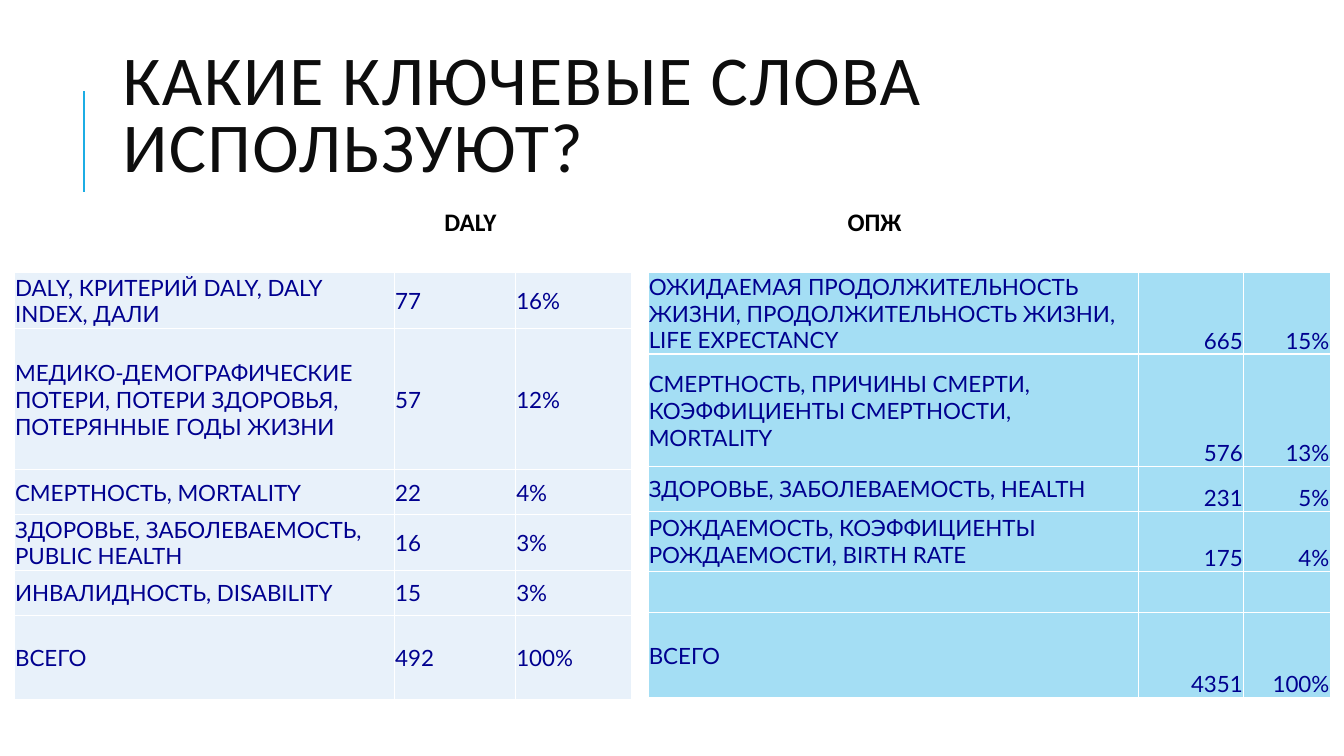
from lxml.etree import SubElement
from pptx import Presentation
from pptx.dml.color import RGBColor
from pptx.enum.shapes import MSO_CONNECTOR
from pptx.enum.text import MSO_ANCHOR, PP_ALIGN
from pptx.oxml.ns import qn
from pptx.util import Cm, Pt

DALY_ROWS = [
    ("DALY, КРИТЕРИЙ DALY, DALY INDEX, ДАЛИ", "77", "16%"),
    ("МЕДИКО-ДЕМОГРАФИЧЕСКИЕ ПОТЕРИ, ПОТЕРИ ЗДОРОВЬЯ, ПОТЕРЯННЫЕ ГОДЫ ЖИЗНИ", "57", "12%"),
    ("СМЕРТНОСТЬ, MORTALITY", "22", "4%"),
    ("ЗДОРОВЬЕ, ЗАБОЛЕВАЕМОСТЬ, PUBLIC HEALTH", "16", "3%"),
    ("ИНВАЛИДНОСТЬ, DISABILITY", "15", "3%"),
    ("ВСЕГО", "492", "100%"),
]
LIFE_EXPECTANCY_ROWS = [
    ("ОЖИДАЕМАЯ ПРОДОЛЖИТЕЛЬНОСТЬ ЖИЗНИ, ПРОДОЛЖИТЕЛЬНОСТЬ ЖИЗНИ, LIFE EXPECTANCY", "665", "15%"),
    ("СМЕРТНОСТЬ, ПРИЧИНЫ СМЕРТИ, КОЭФФИЦИЕНТЫ СМЕРТНОСТИ, MORTALITY", "576", "13%"),
    ("ЗДОРОВЬЕ, ЗАБОЛЕВАЕМОСТЬ, HEALTH", "231", "5%"),
    ("РОЖДАЕМОСТЬ, КОЭФФИЦИЕНТЫ РОЖДАЕМОСТИ, BIRTH RATE", "175", "4%"),
    ("", "", ""),
    ("ВСЕГО", "4351", "100%"),
]


def color(value):
    return RGBColor.from_string(value)


def add_run(paragraph, text, size, font, text_color, bold=False):
    run = paragraph.add_run()
    run.text = text
    run.font.size = Pt(size)
    run.font.name = font
    run.font.bold = bold
    run.font.color.rgb = color(text_color)
    return run


def add_text_frame(slide, left, top, width, height):
    shape = slide.shapes.add_textbox(Cm(left), Cm(top), Cm(width), Cm(height))
    shape.text_frame.word_wrap = True
    return shape.text_frame


def add_title(slide, text):
    frame = add_text_frame(slide, 2.84, 0.91, 27, 4.17)
    frame.vertical_anchor = MSO_ANCHOR.MIDDLE
    paragraph = frame.paragraphs[0]
    paragraph.line_spacing = 0.8
    run = add_run(paragraph, text, 50, "Calibri", "0D0D0D")
    run.font.language_id = None
    run.font._element.set("spc", "100")


def add_accent_line(slide):
    line = slide.shapes.add_connector(
        MSO_CONNECTOR.STRAIGHT, Cm(2.11), Cm(4.83), Cm(2.11), Cm(2.29)
    )
    line.line.color.rgb = color("1CADE4")
    line.line.width = Pt(1.5)
    SubElement(line._element.spPr, qn("a:effectLst"))


def add_table_headings(slide, left_heading, right_heading):
    frame = add_text_frame(slide, 10.95, 5.08, 12.12, 1.02)
    paragraph = frame.paragraphs[0]
    tabs = SubElement(paragraph._p.get_or_add_pPr(), qn("a:tabLst"))
    SubElement(tabs, qn("a:tab"), pos=str(Cm(10.16)), algn="l")
    add_run(paragraph, f"{left_heading}\t{right_heading}", 18, "Calibri", "000000", True)


def set_borders(cell, border_color):
    properties = cell._tc.get_or_add_tcPr()
    for side in ("a:lnL", "a:lnR", "a:lnT", "a:lnB"):
        border = SubElement(properties, qn(side), w=str(Pt(1)))
        fill = SubElement(border, qn("a:solidFill"))
        SubElement(fill, qn("a:srgbClr"), val=border_color)


def fill_cell(cell, text, fill, anchor, alignment):
    set_borders(cell, "FFFFFF")
    cell.fill.solid()
    cell.fill.fore_color.rgb = color(fill)
    cell.margin_left = cell.margin_right = cell.margin_top = Cm(0.02)
    cell.margin_bottom = 0
    cell.vertical_anchor = anchor
    paragraph = cell.text_frame.paragraphs[0]
    paragraph.alignment = alignment
    if text:
        add_run(paragraph, text, 16, "Lato", "00008F")


def add_keyword_table(slide, left, widths, heights, rows, fill, number_anchor, number_alignment):
    shape = slide.shapes.add_table(
        len(rows), len(widths), Cm(left), Cm(6.86), Cm(sum(widths)), Cm(sum(heights))
    )
    table = shape.table
    table.first_row = False
    table.horz_banding = False
    for column, width in zip(table.columns, widths):
        column.width = Cm(width)
    for row, height, texts in zip(table.rows, heights, rows):
        row.height = Cm(height)
        for index, (cell, text) in enumerate(zip(row.cells, texts)):
            if index == 0:
                fill_cell(cell, text, fill, MSO_ANCHOR.MIDDLE, PP_ALIGN.LEFT)
            else:
                fill_cell(cell, text, fill, number_anchor, number_alignment)


def main():
    presentation = Presentation()
    presentation.slide_width = Cm(33.87)
    presentation.slide_height = Cm(19.05)
    slide = presentation.slides.add_slide(presentation.slide_layouts[6])
    add_accent_line(slide)
    add_title(slide, "КАКИЕ КЛЮЧЕВЫЕ СЛОВА ИСПОЛЬЗУЮТ?")
    add_table_headings(slide, "DALY", "ОПЖ")
    add_keyword_table(
        slide, 0.36, [9.58, 3.05, 2.92], [1.42, 3.56, 1.12, 1.42, 1.12, 2.13],
        DALY_ROWS, "E8F1FA", MSO_ANCHOR.MIDDLE, PP_ALIGN.LEFT,
    )
    add_keyword_table(
        slide, 16.33, [12.37, 2.64, 2.18], [2.06, 2.84, 1.12, 1.52, 1.04, 2.13],
        LIFE_EXPECTANCY_ROWS, "A4DEF4", MSO_ANCHOR.BOTTOM, PP_ALIGN.RIGHT,
    )
    presentation.save("out.pptx")


if __name__ == "__main__":
    main()
